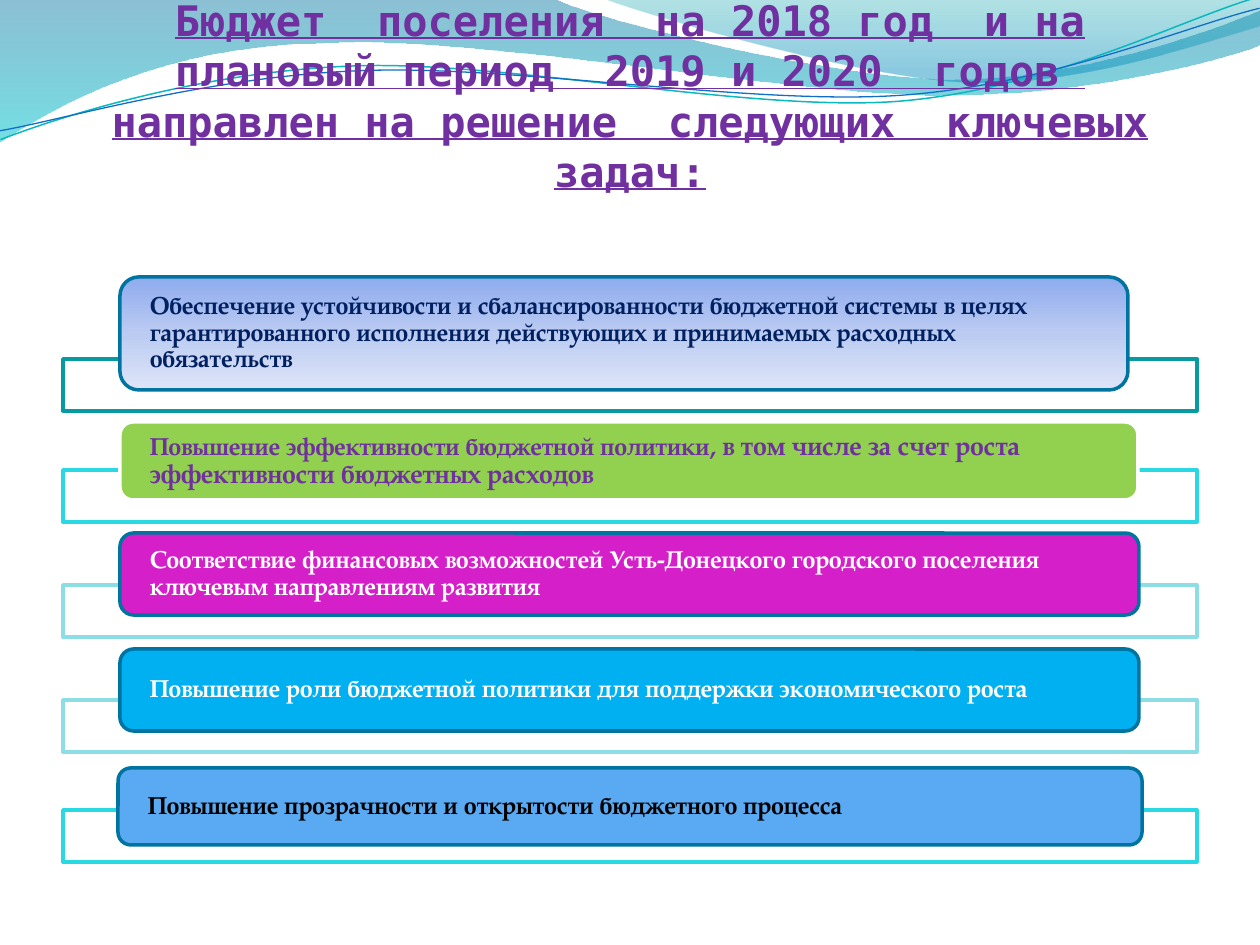
from lxml import etree
from pptx import Presentation
from pptx.dml.color import RGBColor
from pptx.enum.shapes import MSO_SHAPE
from pptx.enum.text import MSO_ANCHOR, MSO_AUTO_SIZE, PP_ALIGN
from pptx.oxml.ns import qn
from pptx.util import Emu, Pt

ROUNDED, RECTANGLE = MSO_SHAPE.ROUNDED_RECTANGLE, MSO_SHAPE.RECTANGLE
MIDDLE, BOTTOM = MSO_ANCHOR.MIDDLE, MSO_ANCHOR.BOTTOM
LEFT, CENTER = PP_ALIGN.LEFT, PP_ALIGN.CENTER
NO_AUTOFIT = MSO_AUTO_SIZE.NONE

SCALE = 914400 / 126  # EMU per px
SLIDE_SIZE = (1260, 945)
TITLE_FONT, BODY_FONT = "DejaVu Sans Mono", "TeX Gyre Pagella"

PURPLE = RGBColor(0x70, 0x30, 0xA0)
NAVY = RGBColor(0x00, 0x20, 0x60)
WHITE = RGBColor(0xFF, 0xFF, 0xFF)
BLACK = RGBColor(0x00, 0x00, 0x00)
DEEP_BLUE = RGBColor(0x00, 0x74, 0xA1)
TEAL = RGBColor(0x08, 0x9A, 0xA1)
CYAN = RGBColor(0x2A, 0xD8, 0xE3)
PALE_CYAN = RGBColor(0x8C, 0xDE, 0xE4)
GREEN = RGBColor(0x92, 0xD0, 0x50)
MAGENTA = RGBColor(0xD5, 0x1F, 0xC8)
AZURE = RGBColor(0x00, 0xB0, 0xF0)
SKY = RGBColor(0x59, 0xAA, 0xF2)
WAVE_TEAL = RGBColor(0x0A, 0xB8, 0xBF)
WAVE_BLUE = RGBColor(0x0F, 0x6F, 0xC6)

# Gradient stops: position %, colour, opacity %
BOX_GRADIENT = [(0, RGBColor(0x8E, 0xAB, 0xEE), 100),
                (50, RGBColor(0xBB, 0xCB, 0xF2), 100),
                (100, RGBColor(0xDE, 0xE5, 0xF8), 100)]
LEFT_WAVE_GRADIENT = [(0, DEEP_BLUE, 45), (100, RGBColor(0x00, 0xC6, 0xCF), 55)]
RIGHT_WAVE_GRADIENT = [(0, RGBColor(0x00, 0xA1, 0xA9), 30),
                       (80, RGBColor(0x00, 0x8B, 0xBF), 45)]

# Each step is one point (straight) or three points (cubic curve)
WAVES = [
    ((0, 0), [[(554, -1)],
              [(600, 21), (837, 79), (955, 79)],
              [(1075, 79), (1207, 33), (1260, 11)],
              [(1261, 45)],
              [(1239, 55), (1096, 96), (940, 95)],
              [(784, 95), (481, 35), (324, 43)],
              [(163, 45), (58, 105), (-1, 142)]], LEFT_WAVE_GRADIENT),
    ((604, -1), [[(641, 14), (859, 78), (969, 82)],
                 [(1079, 86), (1211, 40), (1260, 26)],
                 [(1260, 0)]], RIGHT_WAVE_GRADIENT),
]
WAVE_LINE_ROTATION = 357.3
WAVE_LINES = [
    ((-2, 110), [[(58, 90), (199, 52), (350, 53)],
                 [(499, 53), (745, 118), (896, 114)],
                 [(1049, 109), (1184, 45), (1260, 27)]], WAVE_TEAL, 0.85),
    ((-2, 101), [[(57, 94), (207, 57), (357, 58)],
                 [(509, 58), (750, 112), (902, 108)],
                 [(1052, 104), (1189, 52), (1262, 38)]], WAVE_BLUE, 0.75),
]

TITLE = ("Бюджет  поселения  на 2018 год  и на плановый период  2019 и 2020  годов  "
         "направлен на решение  следующих  ключевых задач:")
TITLE_AREA = (63, 78, 1134, 168)
TITLE_BOTTOM_INSET = 50

FRAME_LEFT, FRAME_WIDTH, FRAME_HEIGHT = 63, 1134, 52
TEXT_INSET = 30
CORNER_INSET = 0.05  # text inset of a rounded corner, share of box height

# Frame top, frame colour, box area, box fill, box outline, text colour, runs (text, size)
TASKS = [
    (359, TEAL, (120, 277, 1008, 113), BOX_GRADIENT, DEEP_BLUE, NAVY,
     [("Обеспечение устойчивости и сбалансированности бюджетной системы в целях "
       "гарантированного исполнения действующих и принимаемых расходных обязательств", 14)]),
    (470, CYAN, (120, 422, 1018, 78), GREEN, WHITE, PURPLE,
     [("Повышение эффективности бюджетной политики, ", 14),
      ("в том числе за счет роста эффективности бюджетных расходов", 15)]),
    (585, PALE_CYAN, (120, 533, 1019, 82), MAGENTA, DEEP_BLUE, WHITE,
     [("Соответствие финансовых возможностей Усть-Донецкого городского поселения "
       "ключевым направлениям развития", 14)]),
    (700, PALE_CYAN, (120, 649, 1019, 82), AZURE, DEEP_BLUE, WHITE,
     [("Повышение роли бюджетной политики для поддержки экономического роста", 14)]),
    (810, CYAN, (118, 768, 1024, 77), SKY, DEEP_BLUE, BLACK,
     [("Повышение прозрачности и открытости бюджетного процесса", 14)]),
]


def px(length):
    return Emu(round(length * SCALE))


def fill_gradient(shape, stops):
    """Fill from top to bottom with any number of translucent stops."""
    shape.fill.gradient()
    shape.fill.gradient_angle = 270
    stop_list = shape.element.spPr.find(qn("a:gradFill")).find(qn("a:gsLst"))
    for old_stop in list(stop_list):
        stop_list.remove(old_stop)
    for position, color, opacity in stops:
        stop = etree.SubElement(stop_list, qn("a:gs"), pos=str(position * 1000))
        rgb = etree.SubElement(stop, qn("a:srgbClr"), val=str(color))
        if opacity < 100:
            etree.SubElement(rgb, qn("a:alpha"), val=str(opacity * 1000))


def add_outline(slide, start, steps, close):
    """Draw a freeform, then merge each three-point step into one cubic curve."""
    points = [(x * SCALE, y * SCALE) for x, y in [start, *sum(steps, [])]]
    builder = slide.shapes.build_freeform(*points[0], scale=1.0)
    builder.add_line_segments(points[1:], close=close)
    shape = builder.convert_to_shape()
    shape.shadow.inherit = False
    segments = iter(list(shape.element.spPr.iter(qn("a:lnTo"))))
    for step in steps:
        first, *others = [next(segments) for _ in step]
        if others:
            first.tag = qn("a:cubicBezTo")
            for segment in others:
                first.append(segment[0])
                segment.getparent().remove(segment)
    return shape


def set_line(shape, color, width):
    shape.line.color.rgb = color
    shape.line.width = Pt(width)


def add_block(slide, kind, area, line_color):
    shape = slide.shapes.add_shape(kind, *map(px, area))
    shape.shadow.inherit = False
    set_line(shape, line_color, 2)
    return shape


def write_text(shape, runs, font, color, align, anchor, insets):
    frame = shape.text_frame
    frame.word_wrap = True
    frame.auto_size = NO_AUTOFIT
    frame.vertical_anchor = anchor
    (frame.margin_left, frame.margin_top,
     frame.margin_right, frame.margin_bottom) = map(px, insets)
    para = frame.paragraphs[0]
    para.alignment = align
    for text, size in runs:
        span = para.add_run()
        span.text = text
        span.font.name = font
        span.font.size = Pt(size)
        span.font.bold = True
        span.font.color.rgb = color
    return para


def add_waves(slide):
    for start, steps, stops in WAVES:
        wave = add_outline(slide, start, steps, True)
        fill_gradient(wave, stops)
        wave.line.fill.background()
    for start, steps, color, width in WAVE_LINES:
        wave = add_outline(slide, start, steps, False)
        wave.rotation = WAVE_LINE_ROTATION
        wave.fill.background()
        set_line(wave, color, width)


def place_title(slide):
    title = slide.shapes.title
    title.element.getparent().append(title.element)  # in front of the waves
    title.left, title.top, title.width, title.height = map(px, TITLE_AREA)
    para = write_text(title, [(TITLE, 24)], TITLE_FONT, PURPLE, CENTER, BOTTOM,
                      (0, 6, 0, TITLE_BOTTOM_INSET))
    para.runs[0].font.underline = True


def add_task(slide, frame_top, frame_color, area, fill, outline, text_color, runs):
    frame = add_block(slide, RECTANGLE,
                      (FRAME_LEFT, frame_top, FRAME_WIDTH, FRAME_HEIGHT), frame_color)
    frame.fill.background()
    box = add_block(slide, ROUNDED, area, outline)
    if isinstance(fill, list):
        fill_gradient(box, fill)
    else:
        box.fill.solid()
        box.fill.fore_color.rgb = fill
    inset = TEXT_INSET - CORNER_INSET * area[3]
    para = write_text(box, runs, BODY_FONT, text_color, LEFT, MIDDLE, (inset, 0, inset, 0))
    para.line_spacing = 0.9


def main():
    deck = Presentation()
    deck.slide_width, deck.slide_height = map(px, SLIDE_SIZE)
    slide = deck.slides.add_slide(deck.slide_layouts[5])
    add_waves(slide)
    place_title(slide)
    for task in TASKS:
        add_task(slide, *task)
    deck.save("out.pptx")


if __name__ == "__main__":
    main()
